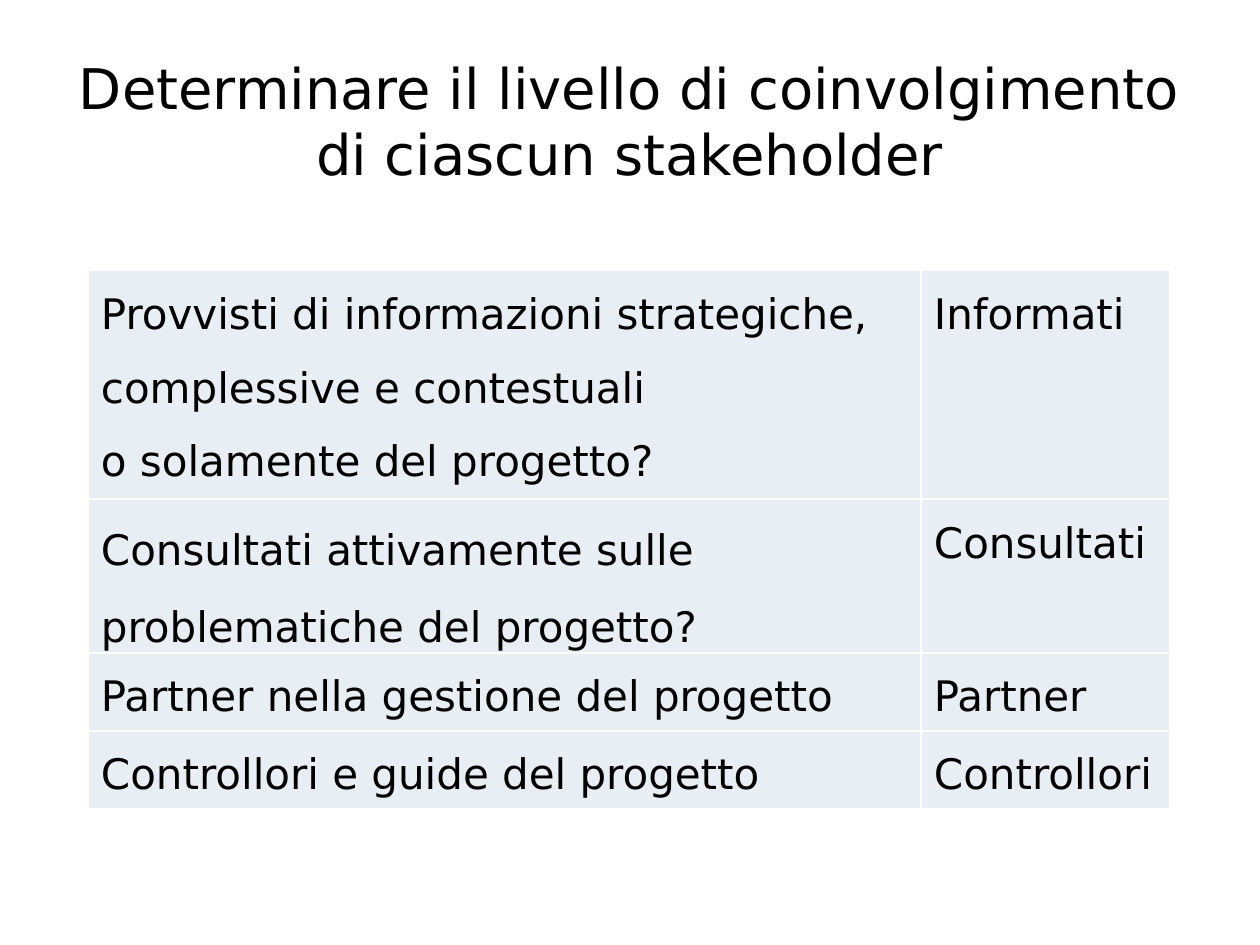
from lxml import etree
from pptx import Presentation
from pptx.dml.color import RGBColor
from pptx.enum.text import MSO_ANCHOR, PP_ALIGN
from pptx.oxml.ns import qn
from pptx.util import Pt

CENTER, LEFT = PP_ALIGN.CENTER, PP_ALIGN.LEFT
TOP = MSO_ANCHOR.TOP
PX = 914400 // 126
FONT = "DejaVu Sans"
COLORS = {"text": "000000", "cell": "E9EDF4", "border": "FFFFFF"}

TITLE = "Determinare il livello di coinvolgimento\vdi ciascun stakeholder"
ROWS = [
    (["Provvisti di informazioni strategiche,",
      "complessive e contestuali\vo solamente del progetto?"], ["Informati"]),
    (["Consultati attivamente sulle\vproblematiche del progetto?"], ["Consultati"]),
    (["Partner nella gestione del progetto"], ["Partner"]),
    (["Controllori e guide del progetto"], ["Controllori"]),
]
COLUMN_WIDTHS = [833, 249]
ROW_HEIGHTS = [229, 154, 78, 78]
TABLE_LEFT, TABLE_TOP = 88, 270
CELL_LEFT, CELL_TOP = 13, 20
FIXED_LINE_CELL = (1, 0)


def px(value):
    return value * PX


def write(paragraph, text, size=24, align=LEFT, line=None, before=0):
    paragraph.text = text
    paragraph.alignment = align
    if line:
        paragraph.line_spacing = line
    if before:
        paragraph.space_before = Pt(before)
    for run in paragraph.runs:
        run.font.name = FONT
        run.font.size = Pt(size)
        run.font.color.rgb = RGBColor.from_string(COLORS["text"])


def set_borders(cell):
    properties = cell._tc.get_or_add_tcPr()
    for side in ("a:lnL", "a:lnR", "a:lnT", "a:lnB"):
        border = etree.SubElement(properties, qn(side), w=str(Pt(1)))
        fill = etree.SubElement(border, qn("a:solidFill"))
        etree.SubElement(fill, qn("a:srgbClr"), val=COLORS["border"])


def add_title(slide):
    box = slide.shapes.add_textbox(px(79), px(48), px(1102), px(138))
    frame = box.text_frame
    frame.word_wrap = False
    frame.vertical_anchor = TOP
    frame.margin_left = frame.margin_right = frame.margin_bottom = 0
    frame.margin_top = px(6)
    write(frame.paragraphs[0], TITLE, size=32, align=CENTER, line=Pt(37.9))


def fill_cell(cell, texts, fixed_line):
    cell.margin_left = px(CELL_LEFT)
    cell.margin_right = cell.margin_bottom = 0
    cell.margin_top = 0 if fixed_line else px(CELL_TOP)
    cell.vertical_anchor = TOP
    set_borders(cell)
    cell.fill.solid()
    cell.fill.fore_color.rgb = RGBColor.from_string(COLORS["cell"])
    frame = cell.text_frame
    write(frame.paragraphs[0], texts[0], line=Pt(43.9) if fixed_line else None)
    for text in texts[1:]:
        write(frame.add_paragraph(), text, line=1.49, before=1.2)


def add_levels_table(slide):
    table = slide.shapes.add_table(
        len(ROWS), len(COLUMN_WIDTHS), px(TABLE_LEFT), px(TABLE_TOP),
        px(sum(COLUMN_WIDTHS)), px(sum(ROW_HEIGHTS))).table
    table.first_row = table.horz_banding = False
    for column, width in zip(table.columns, COLUMN_WIDTHS):
        column.width = px(width)
    for row, height in zip(table.rows, ROW_HEIGHTS):
        row.height = px(height)
    for row_index, row in enumerate(ROWS):
        for column_index, texts in enumerate(row):
            position = (row_index, column_index)
            fill_cell(table.cell(*position), texts, position == FIXED_LINE_CELL)


def main():
    presentation = Presentation()
    presentation.slide_width, presentation.slide_height = px(1260), px(945)
    slide = presentation.slides.add_slide(presentation.slide_layouts[6])
    add_title(slide)
    add_levels_table(slide)
    presentation.save("out.pptx")


if __name__ == "__main__":
    main()
